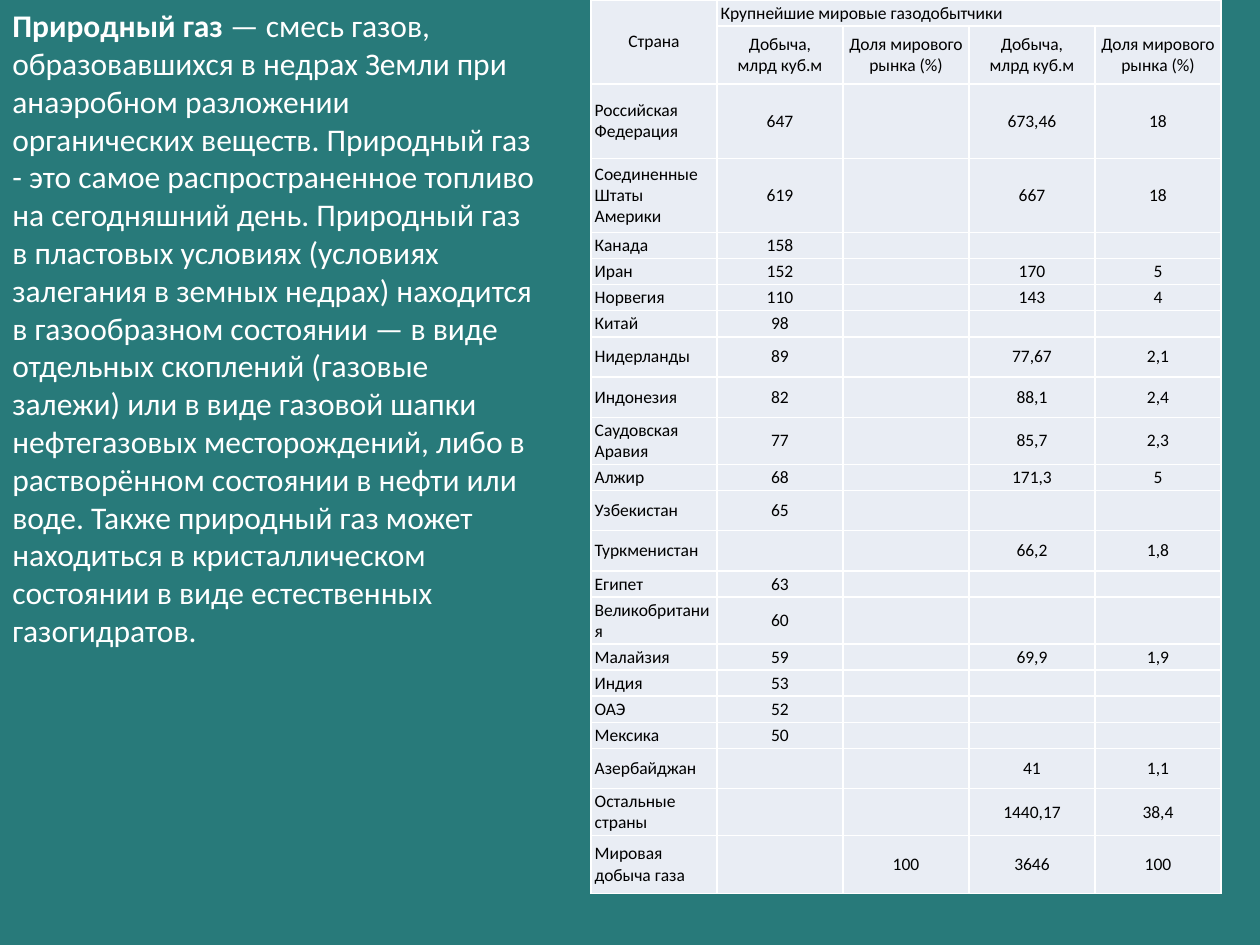
from dataclasses import dataclass
from itertools import product

from lxml.etree import SubElement as Sub
from pptx import Presentation
from pptx.dml.color import RGBColor
from pptx.enum.text import MSO_ANCHOR as Anchor, MSO_AUTO_SIZE as Auto, PP_ALIGN as Align
from pptx.oxml.ns import qn
from pptx.slide import Slide
from pptx.table import _Cell as Cell
from pptx.text.text import Font
from pptx.util import Inches, Pt

TEAL = RGBColor(0x28, 0x7A, 0x7A)
PALE = RGBColor(0xE9, 0xED, 0xF4)
WHITE = RGBColor(0xFF, 0xFF, 0xFF)
BLACK = RGBColor(0, 0, 0)
FACE = "Calibri"
SMALL = 10
EDGE = Pt(1)

TERM = "Природный газ"
PROSE = (
    " — смесь газов, образовавшихся в недрах Земли при анаэробном разложении "
    "органических веществ. Природный газ - это самое распространенное топливо "
    "на сегодняшний день. Природный газ в пластовых условиях (условиях "
    "залегания в земных недрах) находится в газообразном состоянии — в виде "
    "отдельных скоплений (газовые залежи) или в виде газовой шапки "
    "нефтегазовых месторождений, либо в растворённом состоянии в нефти или "
    "воде. Также природный газ может находиться в кристаллическом состоянии "
    "в виде естественных газогидратов."
)


@dataclass(frozen=True)
class Row:
    high: float
    name: str
    mined: str = ""
    share: str = ""
    later: str = ""
    quota: str = ""

    def texts(self) -> tuple[str, ...]:
        return self.name, self.mined, self.share, self.later, self.quota


MINED = "Добыча,\nмлрд куб.м"
SHARE = "Доля мирового\nрынка (%)"
ROWS = [
    Row(0.18, "Страна", "Крупнейшие мировые газодобытчики"),
    Row(0.46, "", MINED, SHARE, MINED, SHARE),
    Row(0.59, "Российская Федерация", "647", "", "673,46", "18"),
    Row(0.59, "Соединенные Штаты Америки", "619", "", "667", "18"),
    Row(0.2, "Канада", "158"),
    Row(0.2, "Иран", "152", "", "170", "5"),
    Row(0.2, "Норвегия", "110", "", "143", "4"),
    Row(0.2, "Китай", "98"),
    Row(0.32, "Нидерланды", "89", "", "77,67", "2,1"),
    Row(0.32, "Индонезия", "82", "", "88,1", "2,4"),
    Row(0.37, "Саудовская Аравия", "77", "", "85,7", "2,3"),
    Row(0.2, "Алжир", "68", "", "171,3", "5"),
    Row(0.32, "Узбекистан", "65"),
    Row(0.32, "Туркменистан", "", "", "66,2", "1,8"),
    Row(0.2, "Египет", "63"),
    Row(0.37, "Великобритания", "60"),
    Row(0.2, "Малайзия", "59", "", "69,9", "1,9"),
    Row(0.2, "Индия", "53"),
    Row(0.2, "ОАЭ", "52"),
    Row(0.2, "Мексика", "50"),
    Row(0.32, "Азербайджан", "", "", "41", "1,1"),
    Row(0.37, "Остальные страны", "", "", "1440,17", "38,4"),
    Row(0.46, "Мировая добыча газа", "", "100", "3646", "100"),
]
COLS = 5


def style(font: Font, size: int, color: RGBColor, bold: bool = False) -> None:
    font.name, font.size, font.bold = FACE, Pt(size), bold
    font.color.rgb = color


def frame(cell: Cell) -> None:
    props = cell._tc.get_or_add_tcPr()
    for side in "LRTB":
        line = Sub(props, qn(f"a:ln{side}"), w=str(EDGE))
        fill = Sub(line, qn("a:solidFill"))
        Sub(fill, qn("a:srgbClr"), val=str(WHITE))


def write(cell: Cell, text: str, align: Align, anchor: Anchor) -> None:
    frame(cell)
    cell.fill.solid()
    cell.fill.fore_color.rgb = PALE
    cell.margin_left = cell.margin_right = Inches(0.03)
    cell.margin_top = cell.margin_bottom = Inches(0.02)
    cell.vertical_anchor = anchor
    para = cell.text_frame.paragraphs[0]
    para.text = text
    para.alignment = align
    for run in para.runs:
        style(run.font, SMALL, BLACK)
    size = str(SMALL * 100)
    for gap in para._p.findall(qn("a:br")):
        Sub(gap, qn("a:rPr"), sz=size)
    Sub(para._p, qn("a:endParaRPr"), sz=size)


def add_prose(slide: Slide) -> None:
    box = slide.shapes.add_textbox(0, 0, Inches(4.37), Inches(5.25))
    body = box.text_frame
    body.word_wrap = True
    body.auto_size = Auto.SHAPE_TO_FIT_TEXT
    para = body.paragraphs[0]
    for text, bold in ((TERM, True), (PROSE, False)):
        run = para.add_run()
        run.text = text
        style(run.font, 18, WHITE, bold)


def add_grid(slide: Slide) -> None:
    high = sum(row.high for row in ROWS)
    table = slide.shapes.add_table(
        len(ROWS), COLS, Inches(4.69), 0, Inches(COLS), Inches(high)
    ).table
    table.first_row = table.horz_banding = False
    for line, row in zip(table.rows, ROWS):
        line.height = Inches(row.high)
    for down, across in product(range(len(ROWS)), range(COLS)):
        title = down == 0 and across > 0
        left = title or (down > 1 and across == 0)
        write(
            table.cell(down, across),
            ROWS[down].texts()[across],
            Align.LEFT if left else Align.CENTER,
            Anchor.TOP if title else Anchor.MIDDLE,
        )
    table.cell(0, 0).merge(table.cell(1, 0))
    table.cell(0, 1).merge(table.cell(0, COLS - 1))


def main() -> None:
    deck = Presentation()
    deck.slide_width, deck.slide_height = Inches(10), Inches(7.5)
    slide = deck.slides.add_slide(deck.slide_layouts[6])
    slide.background.fill.solid()
    slide.background.fill.fore_color.rgb = TEAL
    add_prose(slide)
    add_grid(slide)
    deck.save("out.pptx")


if __name__ == "__main__":
    main()
